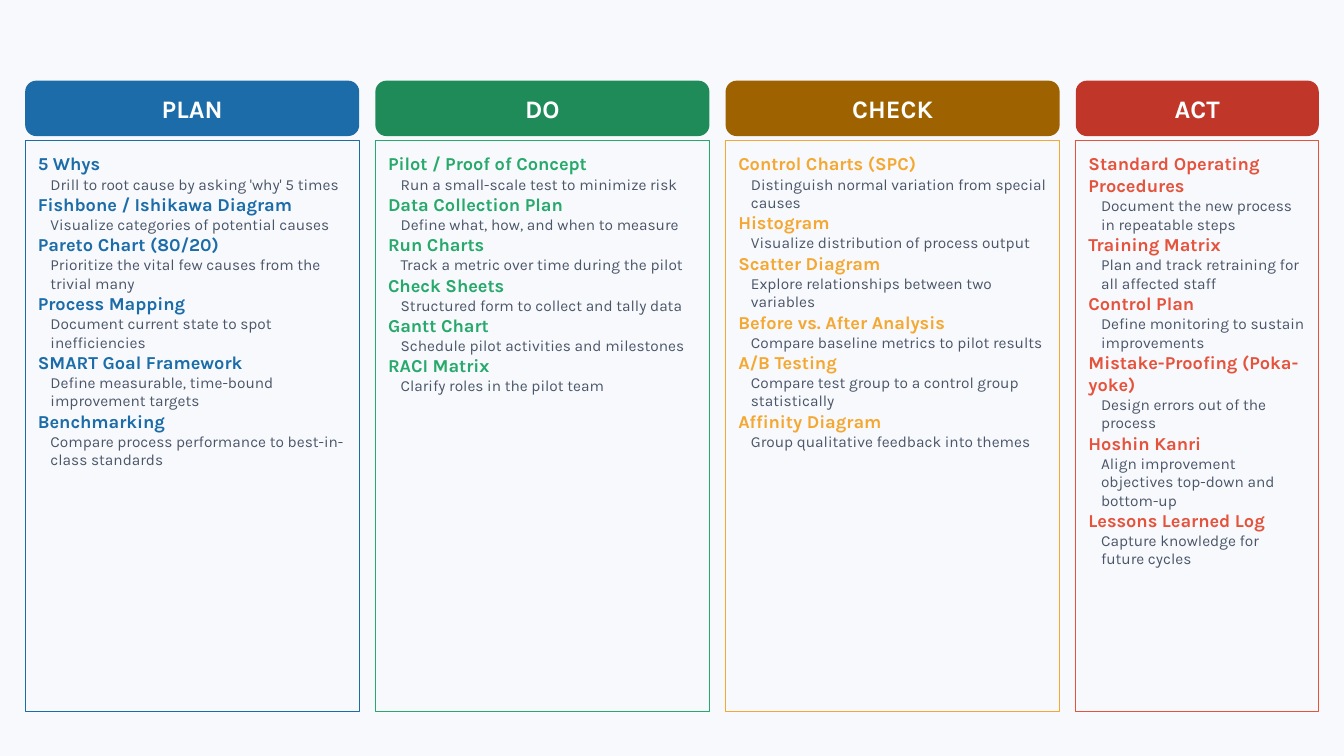
"""Build a slide that lists improvement tools for each phase of Plan, Do, Check, Act."""
from pptx import Presentation
from pptx.dml.color import RGBColor
from pptx.enum.shapes import MSO_SHAPE
from pptx.enum.text import MSO_ANCHOR, MSO_AUTO_SIZE, PP_ALIGN
from pptx.oxml.ns import qn
from pptx.util import Inches, Pt
from lxml.etree import SubElement

COLORS = {
    "background": "F7F9FC", "white": "FFFFFF", "description": "4A5568",
    "plan_header": "1B6CA8", "plan": "1B6CA8",
    "do_header": "1E8B58", "do": "27A96C",
    "check_header": "9E6200", "check": "F4A832",
    "act_header": "C0372A", "act": "E5533D",
}

PHASES = {
    "PLAN": [
        ("5 Whys", "Drill to root cause by asking 'why' 5 times"),
        ("Fishbone / Ishikawa Diagram", "Visualize categories of potential causes"),
        ("Pareto Chart (80/20)", "Prioritize the vital few causes from the trivial many"),
        ("Process Mapping", "Document current state to spot inefficiencies"),
        ("SMART Goal Framework", "Define measurable, time-bound improvement targets"),
        ("Benchmarking", "Compare process performance to best-in-class standards"),
    ],
    "DO": [
        ("Pilot / Proof of Concept", "Run a small-scale test to minimize risk"),
        ("Data Collection Plan", "Define what, how, and when to measure"),
        ("Run Charts", "Track a metric over time during the pilot"),
        ("Check Sheets", "Structured form to collect and tally data"),
        ("Gantt Chart", "Schedule pilot activities and milestones"),
        ("RACI Matrix", "Clarify roles in the pilot team"),
    ],
    "CHECK": [
        ("Control Charts (SPC)", "Distinguish normal variation from special causes"),
        ("Histogram", "Visualize distribution of process output"),
        ("Scatter Diagram", "Explore relationships between two variables"),
        ("Before vs. After Analysis", "Compare baseline metrics to pilot results"),
        ("A/B Testing", "Compare test group to a control group statistically"),
        ("Affinity Diagram", "Group qualitative feedback into themes"),
    ],
    "ACT": [
        ("Standard Operating Procedures", "Document the new process in repeatable steps"),
        ("Training Matrix", "Plan and track retraining for all affected staff"),
        ("Control Plan", "Define monitoring to sustain improvements"),
        ("Mistake-Proofing (Poka-yoke)", "Design errors out of the process"),
        ("Hoshin Kanri", "Align improvement objectives top-down and bottom-up"),
        ("Lessons Learned Log", "Capture knowledge for future cycles"),
    ],
}


class PhaseBoard:
    """Hold the style, the column grid and the current slide."""

    font_name = "Karla"
    first_left, last_left, right_edge = 0.25, 10.67, 13.08
    gap = 0.16
    header_row = (0.8, 0.55)
    panel_row = (1.39, 5.67)
    padding = Pt(9)

    def __init__(self, slide, column_count):
        self.slide = slide
        self.step = (self.last_left - self.first_left) / (column_count - 1)
        slide.background.fill.solid()
        slide.background.fill.fore_color.rgb = self.color("background")

    def color(self, name):
        return RGBColor.from_string(COLORS[name])

    def place(self, shape, column, row):
        left = self.first_left + column * self.step
        width = min(self.step - self.gap, self.right_edge - left)
        shape.left, shape.width = Inches(left), Inches(width)
        shape.top, shape.height = (Inches(length) for length in row)

    def set_margins(self, text_frame, margin):
        text_frame.margin_left = text_frame.margin_right = margin
        text_frame.margin_top = text_frame.margin_bottom = margin

    def format_runs(self, paragraph, size, color_name, bold):
        for run in paragraph.runs:
            run.font.name = self.font_name
            run.font.size = Pt(size)
            run.font.bold = bold
            run.font.color.rgb = self.color(color_name)

    def header(self, column, phase):
        shape = self.slide.shapes.add_shape(MSO_SHAPE.ROUNDED_RECTANGLE, 0, 0, 0, 0)
        self.place(shape, column, self.header_row)
        shape.adjustments[0] = 0.2
        shape.shadow.inherit = False
        shape.fill.solid()
        shape.fill.fore_color.rgb = self.color(f"{phase.lower()}_header")
        shape.line.fill.background()
        text_frame = shape.text_frame
        self.set_margins(text_frame, 0)
        text_frame.vertical_anchor = MSO_ANCHOR.MIDDLE
        text_frame.text = phase
        paragraph = text_frame.paragraphs[0]
        paragraph.alignment = PP_ALIGN.CENTER
        self.format_runs(paragraph, 18, "white", True)

    def panel(self, placeholder, column, phase, tools):
        self.place(placeholder, column, self.panel_row)
        placeholder.fill.solid()
        placeholder.fill.fore_color.rgb = self.color("background")
        placeholder.line.color.rgb = self.color(phase.lower())
        placeholder.line.width = Pt(0.72)
        text_frame = placeholder.text_frame
        self.set_margins(text_frame, self.padding)
        text_frame.word_wrap = True
        text_frame.auto_size = MSO_AUTO_SIZE.NONE
        text_frame.vertical_anchor = MSO_ANCHOR.TOP
        text_frame.text = "\n".join(line for tool in tools for line in tool)
        for index, paragraph in enumerate(text_frame.paragraphs):
            if index % 2 == 0:
                self.list_line(paragraph, 0, 13, phase.lower(), True)
            else:
                self.list_line(paragraph, self.padding, 11, "description", False)

    def list_line(self, paragraph, indent, size, color_name, bold):
        paragraph.space_before = Pt(0)
        paragraph.alignment = PP_ALIGN.LEFT
        properties = paragraph._p.get_or_add_pPr()
        properties.set("marL", str(indent))
        properties.set("indent", "0")
        SubElement(properties, qn("a:buNone"))
        self.format_runs(paragraph, size, color_name, bold)


def main():
    presentation = Presentation()
    presentation.slide_width = Inches(13.33)
    presentation.slide_height = Inches(7.5)
    comparison_layout = presentation.slide_layouts.get_by_name("Comparison")
    slide = presentation.slides.add_slide(comparison_layout)
    title = slide.shapes.title
    title.element.getparent().remove(title.element)

    board = PhaseBoard(slide, len(PHASES))
    placeholders = list(slide.placeholders)
    for column, (phase, tools) in enumerate(PHASES.items()):
        board.header(column, phase)
        board.panel(placeholders[column], column, phase, tools)
    presentation.save("out.pptx")


if __name__ == "__main__":
    main()
